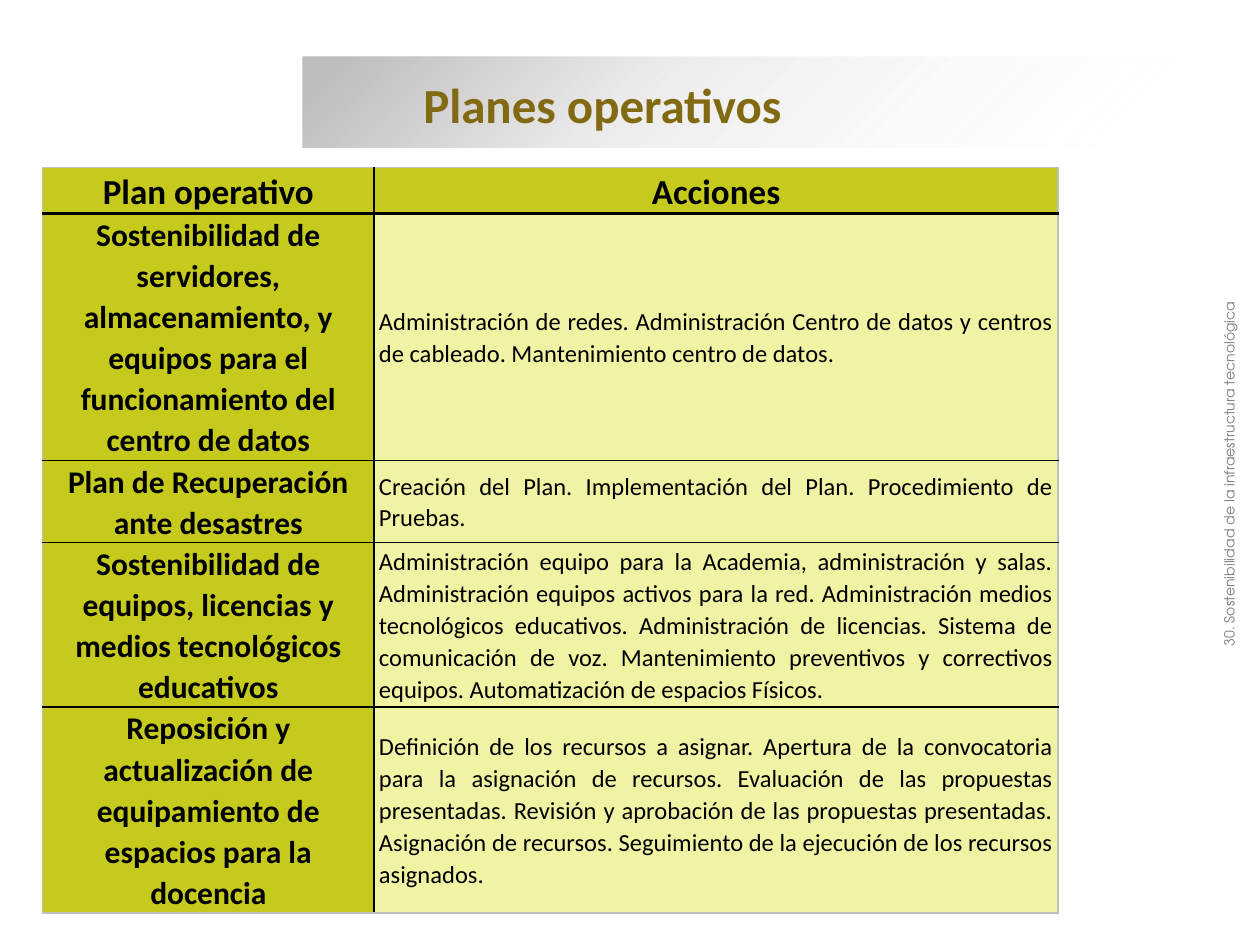
from lxml import etree
from pptx import Presentation
from pptx import util as u
from pptx.dml.color import RGBColor
from pptx.enum import shapes, text
from pptx.oxml import ns

TITLE = "Planes operativos"
SIDE = "30. Sostenibilidad de la infraestructura tecnológica"
HEAD = ("Plan operativo", "Acciones")
PLANS = [
    ("Sostenibilidad de servidores, almacenamiento, y equipos para el funcionamiento del centro de datos",
     "Administración de redes. Administración Centro de datos y centros de cableado. "
     "Mantenimiento centro de datos."),
    ("Plan de Recuperación ante desastres",
     "Creación del Plan. Implementación del Plan. Procedimiento de Pruebas."),
    ("Sostenibilidad de equipos, licencias y medios tecnológicos educativos",
     "Administración equipo para la Academia, administración y salas. "
     "Administración equipos activos para la red. Administración medios tecnológicos educativos. "
     "Administración de licencias. Sistema de comunicación de voz. "
     "Mantenimiento preventivos y correctivos equipos. Automatización de espacios Físicos."),
    ("Reposición y actualización de equipamiento de espacios para la docencia",
     "Definición de los recursos a asignar. Apertura de la convocatoria para la asignación de recursos. "
     "Evaluación de las propuestas presentadas. Revisión y aprobación de las propuestas presentadas. "
     "Asignación de recursos. Seguimiento de la ejecución de los recursos asignados."),
]
COLS = (6.68, 13.79)
ROWS = (0.91, 4.9, 1.63, 3.25, 4.06)
STOPS = [(5, "BFBFBF", 100), (37, "BFBFBF", 31), (100, "FFFFFF", 0)]
OLIVE, CREAM, BLACK, GREY = "C6CA1C", "F0F2A4", "000000", "BFBFBF"
ALIGN = text.PP_ALIGN


def paint(fill, tone):
    fill.solid()
    fill.fore_color.rgb = RGBColor.from_string(tone)


def write(frame, words, size, tone=BLACK, bold=False, face="Calibri", align=ALIGN.LEFT, space=None):
    frame.word_wrap = True
    para = frame.paragraphs[0]
    para.alignment = align
    para.line_spacing = space
    run = para.add_run()
    run.text = words
    font = run.font
    font.size, font.bold, font.name = u.Pt(size), bold, face
    font.color.rgb = RGBColor.from_string(tone)


def node(up, tag, **attrs):
    return etree.SubElement(up, ns.qn("a:" + tag), {k: str(v) for k, v in attrs.items()})


def fade(shape, stops, angle):
    shape.fill.gradient()
    grad = shape._element.spPr.find(ns.qn("a:gradFill"))
    for kid in list(grad):
        grad.remove(kid)
    group = node(grad, "gsLst")
    for spot, tone, alpha in stops:
        stop = node(group, "gs", pos=spot * 1000)
        node(node(stop, "srgbClr", val=tone), "alpha", val=alpha * 1000)
    node(grad, "lin", ang=angle * 60000, scaled=0)


def edge(cell, lines):
    props = cell._tc.get_or_add_tcPr()
    for i, (side, (tone, wide)) in enumerate(lines.items()):
        line = node(props, "ln" + side, w=u.Pt(wide))
        node(node(line, "solidFill"), "srgbClr", val=tone)
        props.insert(i, line)


def build_table(slide):
    data = [HEAD] + PLANS
    frame = slide.shapes.add_table(len(data), len(COLS), u.Cm(0.86), u.Cm(3.38),
                                   u.Cm(sum(COLS)), u.Cm(sum(ROWS)))
    grid = frame.table
    for col, wide in zip(grid.columns, COLS):
        col.width = u.Cm(wide)
    outer, thin, thick = (GREY, 1), (BLACK, 1), (BLACK, 1.5)
    last = len(data) - 1
    for r, (pair, high) in enumerate(zip(data, ROWS)):
        grid.rows[r].height = u.Cm(high)
        for c, words in enumerate(pair):
            cell = grid.cell(r, c)
            label = r == 0 or c == 0
            cell.margin_left = cell.margin_right = u.Cm(0.1)
            cell.margin_top = cell.margin_bottom = 0
            cell.vertical_anchor = text.MSO_ANCHOR.MIDDLE
            paint(cell.fill, OLIVE if label else CREAM)
            write(cell.text_frame, words, 20 if r == 0 else 18 if label else 14, bold=label,
                  align=ALIGN.CENTER if label else ALIGN.JUSTIFY, space=1.07)
            edge(cell, {"L": thick if c else outer,
                        "R": outer if c else thick,
                        "T": outer if r == 0 else thick if r == 1 else thin,
                        "B": thick if r == 0 else outer if r == last else thin})


def main():
    """Build the slide of operating plans and save it."""
    deck = Presentation()
    deck.slide_width, deck.slide_height = u.Cm(25.4), u.Cm(19.05)
    slide = deck.slides.add_slide(deck.slide_layouts[5])

    band = slide.shapes.add_shape(shapes.MSO_SHAPE.RECTANGLE, u.Cm(6.1), u.Cm(1.14), u.Cm(17.73), u.Cm(1.83))
    band.shadow.inherit = False
    band.line.fill.background()
    fade(band, STOPS, 45)

    title = slide.shapes.title
    title._element.addprevious(band._element)
    title.left, title.top, title.width, title.height = (u.Cm(n) for n in (8.28, 1.37, 15.75, 1.45))
    title.text_frame.vertical_anchor = text.MSO_ANCHOR.MIDDLE
    write(title.text_frame, TITLE, 28, "826A12", bold=True)

    build_table(slide)

    side = slide.shapes.add_textbox(u.Cm(18.64), u.Cm(9.25), u.Cm(12.29), u.Cm(0.61))
    side.rotation = 270
    write(side.text_frame, SIDE, 8, "808080", face="TeX Gyre Adventor", align=ALIGN.CENTER)

    deck.save("out.pptx")


if __name__ == "__main__":
    main()
